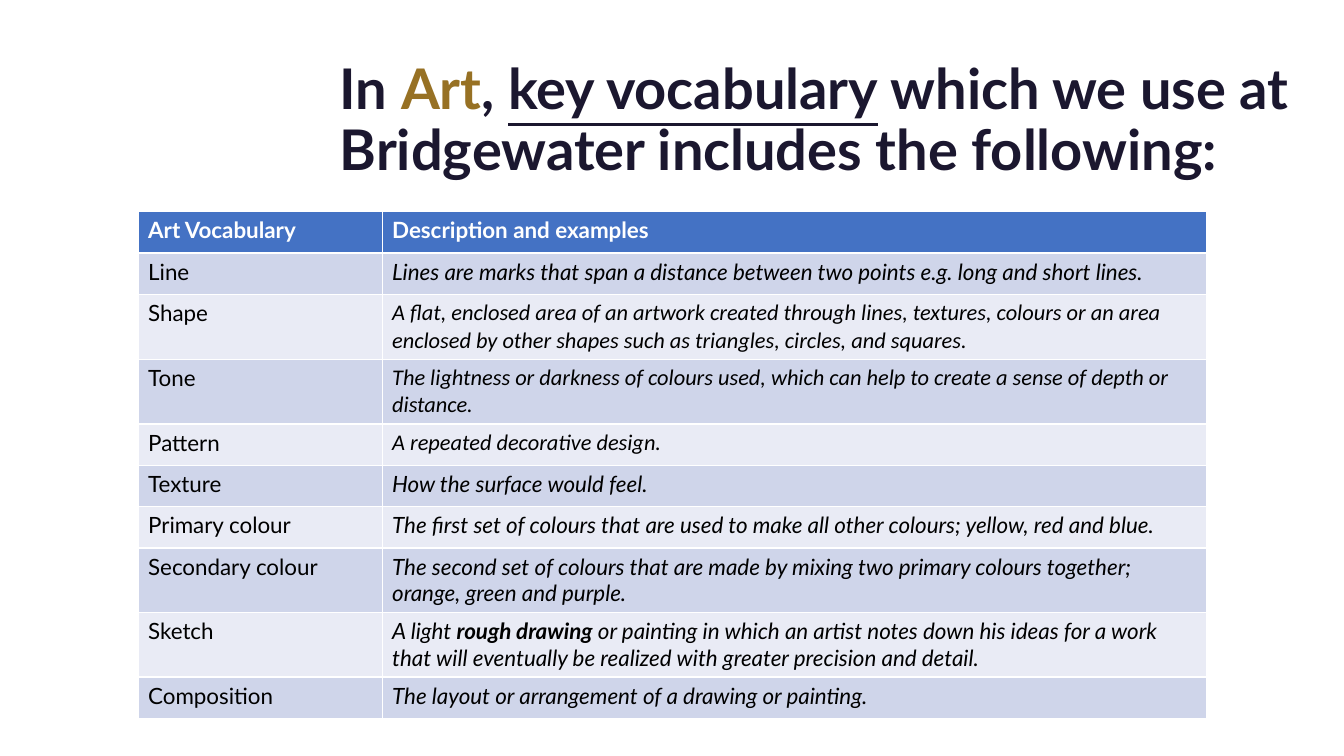
"""Build the Art key vocabulary slide."""
import pptx
import pptx.dml.color
import pptx.enum.text
import pptx.util

COLORS = {"navy": "1B172F", "gold": "977124", "header": "4472C4", "white": "FFFFFF",
          "black": "000000", "odd": "CFD5EA", "even": "E9EBF5"}
TITLE = [("In ", "navy", False), ("Art", "gold", False), (", ", "navy", False),
         ("key vocabulary", "navy", True),
         (" which we use at Bridgewater includes the following:", "navy", False)]
HEADER = ("Art Vocabulary", "Description and examples")
VOCABULARY = [
    ("Line", "Lines are marks that span a distance between two points e.g. long and short lines."),
    ("Shape", "A flat, enclosed area of an artwork created through lines, textures, colours or an "
              "area enclosed by other shapes such as triangles, circles, and squares."),
    ("Tone", "The lightness or darkness of colours used, which can help to create a sense of "
             "depth or distance."),
    ("Pattern", "A repeated decorative design."),
    ("Texture", "How the surface would feel."),
    ("Primary colour", "The first set of colours that are used to make all other colours; "
                       "yellow, red and blue."),
    ("Secondary colour", "The second set of colours that are made by mixing two primary colours "
                         "together; orange, green and purple."),
    ("Sketch", "A light *rough drawing* or painting in which an artist notes down his ideas for "
               "a work that will eventually be realized with greater precision and detail."),
    ("Composition", "The layout or arrangement of a drawing or painting."),
]
CALIBRI_TERMS = {"Shape", "Tone", "Pattern"}
COLUMN_WIDTHS = (2.42, 8.18)
ROW_HEIGHT, TALL_ROW_HEIGHT = 0.41, 0.64
LINE_CAPACITY = 90
Inches = pptx.util.Inches


def color(name):
    return pptx.dml.color.RGBColor.from_string(COLORS[name])


def add_run(paragraph, text, size, color_name, font="Lato", bold=False, italic=False,
            underline=False):
    run = paragraph.add_run()
    run.text = text
    run.font.size = pptx.util.Pt(size)
    run.font.name = font
    run.font.bold = bold
    run.font.italic = italic
    run.font.underline = underline
    run.font.color.rgb = color(color_name)


def add_title(slide):
    title = slide.shapes.title
    title.left, title.top = Inches(3.27), Inches(0.21)
    title.width, title.height = Inches(10.37), Inches(1.65)
    frame = title.text_frame
    frame.word_wrap = True
    frame.auto_size = pptx.enum.text.MSO_AUTO_SIZE.NONE
    frame.vertical_anchor = pptx.enum.text.MSO_ANCHOR.BOTTOM
    paragraph = frame.paragraphs[0]
    paragraph.alignment = pptx.enum.text.PP_ALIGN.LEFT
    paragraph.line_spacing = 0.9
    for text, color_name, underline in TITLE:
        add_run(paragraph, text, 40, color_name, bold=True, underline=underline)


def add_vocabulary_table(slide):
    rows = [HEADER] + VOCABULARY
    heights = [TALL_ROW_HEIGHT if len(description) > LINE_CAPACITY else ROW_HEIGHT
               for term, description in rows]
    table = slide.shapes.add_table(
        len(rows), len(COLUMN_WIDTHS), Inches(1.37), Inches(2.1),
        Inches(sum(COLUMN_WIDTHS)), Inches(sum(heights))).table
    for column, width in zip(table.columns, COLUMN_WIDTHS):
        column.width = Inches(width)
    for row_index, texts in enumerate(rows):
        table.rows[row_index].height = Inches(heights[row_index])
        is_header = row_index == 0
        fill = "header" if is_header else ("even", "odd")[row_index % 2]
        for column_index, text in enumerate(texts):
            cell = table.cell(row_index, column_index)
            cell.fill.solid()
            cell.fill.fore_color.rgb = color(fill)
            is_description = column_index == 1 and not is_header
            font = "Calibri" if is_description and texts[0] in CALIBRI_TERMS else "Lato"
            for part_index, part in enumerate(text.split("*")):
                add_run(cell.text_frame.paragraphs[0], part, 16,
                        "white" if is_header else "black", font,
                        bold=is_header or part_index == 1, italic=is_description)


def main():
    presentation = pptx.Presentation()
    presentation.slide_width, presentation.slide_height = Inches(13.33), Inches(7.5)
    slide = presentation.slides.add_slide(presentation.slide_layouts[5])
    add_title(slide)
    add_vocabulary_table(slide)
    presentation.save("out.pptx")


if __name__ == "__main__":
    main()
